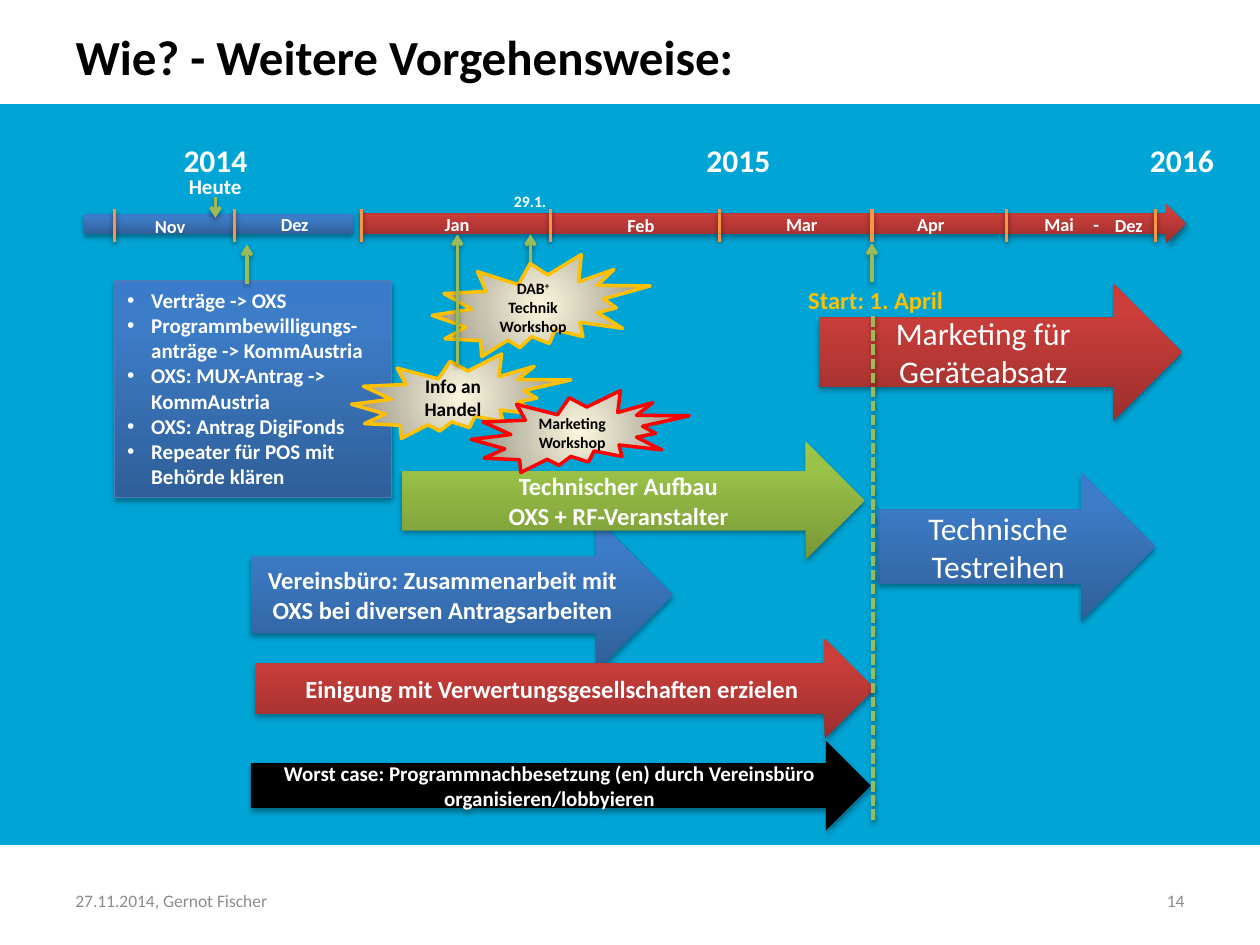
from dataclasses import dataclass

from lxml.etree import SubElement
from pptx import Presentation
from pptx.dml.color import RGBColor
from pptx.enum.dml import MSO_LINE
from pptx.enum.shapes import MSO_CONNECTOR, MSO_SHAPE
from pptx.enum.text import MSO_ANCHOR, MSO_AUTO_SIZE, PP_ALIGN
from pptx.oxml.ns import qn
from pptx.util import Inches, Pt

COLORS = {
    "background": "00A5D5", "white": "FFFFFF", "black": "000000", "gray": "8C8C8C",
    "gold": "FFC000", "alert": "FF0000", "tick": "F79646", "pointer": "9BBB59",
    "border": "4B7EBC",
}
GRADIENTS = {
    "red": ((0, "9C2F2D"), (80, "CB3E3A"), (100, "CE3B37")),
    "blue": ((0, "2F5F99"), (80, "3D7CC7"), (100, "3A7CCB")),
    "green": ((0, "779737"), (80, "9BC348"), (100, "9DC746")),
    "cream": ((0, "FCF7DD"), (100, "918E81")),
}


@dataclass
class Area:
    left: float
    top: float
    width: float
    height: float


@dataclass
class Label:
    area: Area
    text: str
    size: float
    color: str = "white"
    align: PP_ALIGN = PP_ALIGN.LEFT
    anchor: MSO_ANCHOR = MSO_ANCHOR.TOP
    bold: bool = True
    wrap: bool = True


@dataclass
class Block:
    area: Area
    fill: str
    paragraphs: tuple = ()
    size: float = 14
    bold: bool = True
    kind: MSO_SHAPE = MSO_SHAPE.RIGHT_ARROW


@dataclass
class Burst:
    area: Area
    border: str
    paragraphs: tuple
    size: float


def rgb(name: str) -> RGBColor:
    return RGBColor.from_string(COLORS[name])


def place(shape, area: Area) -> None:
    shape.left, shape.top = Inches(area.left), Inches(area.top)
    shape.width, shape.height = Inches(area.width), Inches(area.height)


def add_color(parent, value: str):
    return SubElement(parent, qn("a:srgbClr"), val=value)


def paint(shape, fill: str) -> None:
    if fill in COLORS:
        shape.fill.solid()
        shape.fill.fore_color.rgb = rgb(fill)
        return
    gradient = SubElement(shape._element.spPr, qn("a:gradFill"), rotWithShape="1")
    stops = SubElement(gradient, qn("a:gsLst"))
    for position, value in GRADIENTS[fill]:
        add_color(SubElement(stops, qn("a:gs"), pos=str(position * 1000)), value)
    if fill == "cream":
        circle = SubElement(gradient, qn("a:path"), path="circle")
        SubElement(circle, qn("a:fillToRect"), l="50000", t="50000", r="50000", b="50000")
    else:
        SubElement(gradient, qn("a:lin"), ang="16200000", scaled="0")


def add_shadow(properties, distance: float, opacity: int) -> None:
    effects = properties.find(qn("a:effectLst"))
    if effects is None:
        effects = SubElement(properties, qn("a:effectLst"))
    shadow = SubElement(effects, qn("a:outerShdw"), blurRad=str(Pt(3.1)),
                        dist=str(Pt(distance)), dir="5400000", rotWithShape="0")
    SubElement(add_color(shadow, COLORS["black"]), qn("a:alpha"), val=str(opacity * 1000))


def add_span(para, text: str, size: float, color: str, bold: bool):
    for index, line in enumerate(text.split("\n")):
        if index:
            para.add_line_break()
        span = para.add_run()
        span.text = line
        span.font.name = "Calibri"
        span.font.size = Pt(size)
        span.font.bold = bold
        span.font.color.rgb = rgb(color)
    return span


def write(box, paragraphs: tuple, size: float, color: str, align: PP_ALIGN,
          anchor: MSO_ANCHOR, bold: bool = True, wrap: bool = True) -> None:
    frame = box.text_frame
    frame.word_wrap = wrap
    frame.auto_size = MSO_AUTO_SIZE.NONE
    frame.vertical_anchor = anchor
    for index, text in enumerate(paragraphs):
        para = frame.add_paragraph() if index else frame.paragraphs[0]
        para.alignment = align
        para.space_before = Pt(0)
        base, plus, _ = text.partition("+") if text == "DAB+" else (text, "", "")
        add_span(para, base, size, color, bold)
        if plus:
            add_span(para, plus, size, color, bold).font._element.set("baseline", "30000")


def add_label(page, label: Label) -> None:
    box = page.shapes.add_textbox(0, 0, 0, 0)
    place(box, label.area)
    write(box, (label.text,), label.size, label.color, label.align, label.anchor,
          label.bold, label.wrap)


def add_figure(page, kind: MSO_SHAPE, area: Area, fill: str, border: str = ""):
    shape = page.shapes.add_shape(kind, 0, 0, 0, 0)
    place(shape, area)
    paint(shape, fill)
    if border:
        shape.line.color.rgb = rgb(border)
        shape.line.width = Pt(2)
    else:
        shape.line.fill.background()
    shape.shadow.inherit = False
    return shape


def add_block(page, block: Block) -> None:
    shape = add_figure(page, block.kind, block.area, block.fill)
    add_shadow(shape._element.spPr, 1.8, 35)
    write(shape, block.paragraphs, block.size, "white", PP_ALIGN.CENTER,
          MSO_ANCHOR.MIDDLE, block.bold)


def add_burst(page, burst: Burst) -> None:
    shape = add_figure(page, MSO_SHAPE.EXPLOSION2, burst.area, "cream", burst.border)
    write(shape, burst.paragraphs, burst.size, "black", PP_ALIGN.CENTER, MSO_ANCHOR.MIDDLE)


def add_line(page, x: float, start: float, end: float, color: str = "pointer",
             arrow: bool = True, dashed: bool = False) -> None:
    line = page.shapes.add_connector(MSO_CONNECTOR.STRAIGHT, Inches(x), Inches(start),
                                     Inches(x), Inches(end))
    line.line.color.rgb = rgb(color)
    line.line.width = Pt(2)
    if dashed:
        line.line.dash_style = MSO_LINE.SQUARE_DOT
    properties = line._element.spPr
    if arrow:
        SubElement(properties.find(qn("a:ln")), qn("a:tailEnd"), type="arrow")
    add_shadow(properties, 1.6, 38)


def add_tasks(box) -> None:
    place(box, Area(0.91, 2.23, 2.2, 1.72))
    paint(box, "blue")
    box.line.color.rgb = rgb("border")
    box.line.width = Pt(0.75)
    add_shadow(box._element.spPr, 1.8, 35)
    tasks = ("Verträge -> OXS", "Programmbewilligungs-anträge -> KommAustria",
             "OXS: MUX-Antrag -> KommAustria", "OXS: Antrag DigiFonds",
             "Repeater für POS mit Behörde klären")
    write(box, tasks, 12, "white", PP_ALIGN.LEFT, MSO_ANCHOR.TOP)
    for para in box.text_frame.paragraphs:
        properties = para._p.get_or_add_pPr()
        properties.set("marL", str(Inches(0.19)))
        properties.set("indent", str(-Inches(0.19)))
        SubElement(properties, qn("a:buFont"), typeface="Arial")
        SubElement(properties, qn("a:buChar"), char="•")


def main() -> None:
    deck = Presentation()
    deck.slide_width, deck.slide_height = Inches(10), Inches(7.5)
    page = deck.slides.add_slide(deck.slide_layouts[1])
    page.background.fill.solid()
    page.background.fill.fore_color.rgb = rgb("background")

    for area in (Area(0, 6.72, 10, 0.81), Area(0, 0, 10, 0.81)):
        band = add_figure(page, MSO_SHAPE.RECTANGLE, area, "white", "white")
        page.shapes._spTree.insert(2, band._element)
    title = page.shapes.title
    place(title, Area(0.5, 0.05, 5.6, 0.79))
    write(title, ("Wie? - Weitere Vorgehensweise:",), 28, "black", PP_ALIGN.LEFT, MSO_ANCHOR.MIDDLE)
    add_tasks(page.placeholders[1])

    add_block(page, Block(Area(2.87, 1.62, 6.54, 0.31), "red"))
    add_block(page, Block(Area(0.67, 1.7, 2.13, 0.16), "blue", kind=MSO_SHAPE.RECTANGLE))
    for x in (0.91, 1.86, 2.87, 4.37, 5.71, 6.92, 7.99, 9.17):
        add_line(page, x, 1.92, 1.66, "tick", arrow=False)
    for x, start, end in ((1.71, 1.56, 1.73), (6.92, 2.24, 1.93),
                          (1.96, 2.25, 1.94), (4.21, 2.18, 1.86)):
        add_line(page, x, start, end)

    for text, left, top in (("Nov", 1.13, 1.66), ("Dez", 2.13, 1.64), ("Jan", 3.43, 1.64),
                            ("Feb", 4.88, 1.65), ("Mar", 6.14, 1.64), ("Apr", 7.18, 1.64),
                            ("Mai", 8.19, 1.64), ("-", 8.58, 1.64), ("Dez", 8.75, 1.65)):
        add_label(page, Label(Area(left, top, 0.42, 0.28), text, 10.5, wrap=False))
    for text, left in (("2014", 1.27), ("2015", 5.42), ("2016", 8.94)):
        add_label(page, Label(Area(left, 1.07, 0.88, 0.4), text, 18, align=PP_ALIGN.CENTER))
    for label in (
        Label(Area(1.4, 1.33, 0.63, 0.3), "Heute", 12),
        Label(Area(3.98, 1.47, 0.55, 0.25), "29.1.", 9),
        Label(Area(6.06, 2.21, 1.78, 0.34), "Start: 1. April", 14, "gold", PP_ALIGN.CENTER),
        Label(Area(0.5, 6.95, 2.33, 0.4), "27.11.2014, Gernot Fischer", 10, "gray",
              anchor=MSO_ANCHOR.MIDDLE, bold=False),
        Label(Area(7.17, 6.95, 2.33, 0.4), "14", 10, "gray", PP_ALIGN.RIGHT,
              MSO_ANCHOR.MIDDLE, False),
    ):
        add_label(page, label)

    for block in (
        Block(Area(1.99, 4.11, 3.35, 1.22), "blue",
              ("Vereinsbüro: Zusammenarbeit mit OXS bei diversen Antragsarbeiten",)),
        Block(Area(2.02, 5.07, 4.92, 0.79), "red",
              ("Einigung mit Verwertungsgesellschaften erzielen",)),
        Block(Area(6.97, 3.75, 2.2, 1.18), "blue", ("Technische Testreihen",), 18, False),
        Block(Area(6.5, 2.25, 2.88, 1.09), "red", ("Marketing für Geräteabsatz",), 18, False),
        Block(Area(1.99, 5.88, 4.92, 0.71), "black",
              ("Worst case: Programmnachbesetzung (en) durch Vereinsbüro organisieren/lobbyieren",), 12),
        Block(Area(3.19, 3.51, 3.67, 0.93), "green",
              ("Technischer Aufbau\nOXS + RF-Veranstalter",)),
    ):
        add_block(page, block)
    add_line(page, 6.93, 2.51, 6.51, arrow=False, dashed=True)

    for burst in (
        Burst(Area(3.43, 2.02, 1.73, 0.81), "gold", ("DAB+", "Technik Workshop"), 9),
        Burst(Area(2.79, 2.81, 1.74, 0.67), "gold", ("Info an Handel",), 11),
        Burst(Area(3.74, 3.1, 1.73, 0.65), "alert", ("Marketing Workshop",), 9),
    ):
        add_burst(page, burst)
    add_line(page, 3.63, 2.89, 1.86)

    deck.save("out.pptx")


if __name__ == "__main__":
    main()
